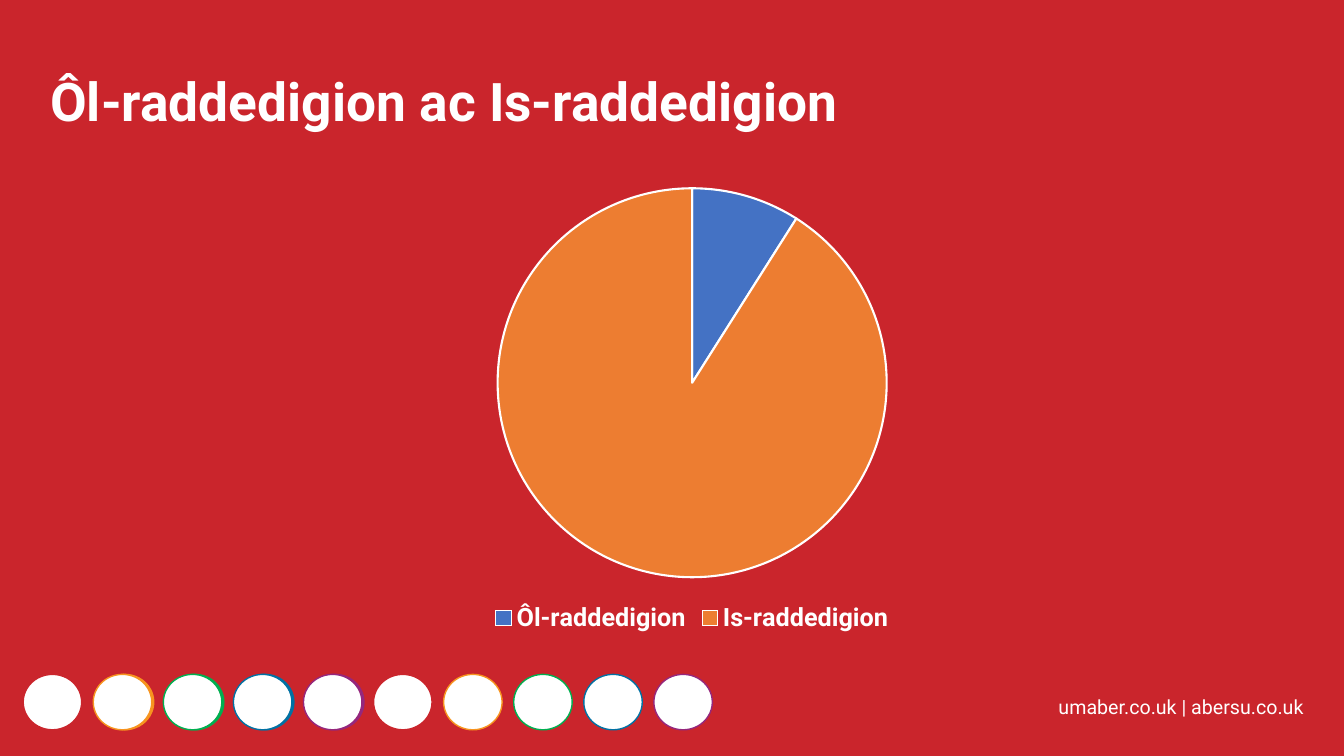
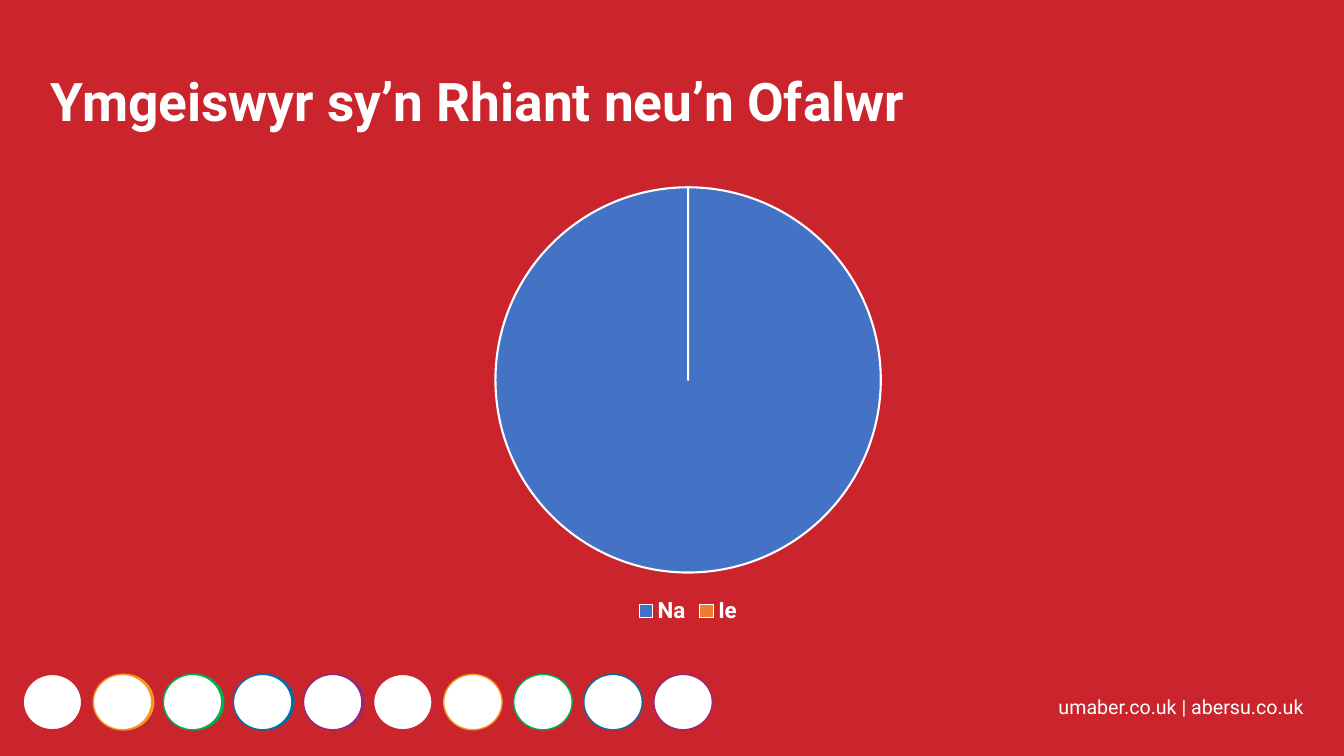
from pptx import Presentation
from pptx.chart.data import CategoryChartData
from pptx.dml.color import RGBColor
from pptx.enum.chart import XL_CHART_TYPE as ChartType, XL_LEGEND_POSITION as LegendPosition
from pptx.enum.shapes import MSO_SHAPE as Preset
from pptx.util import Inches, Pt

RED, WHITE = "CA252C", "FFFFFF"
RING_COLOURS = [RED, "F7941F", "00AF50", "0171A3", "95277D"]
SLICE_COLOURS = ["4472C4", "ED7D31"]
RING_STEP = 0.695

SLIDES = [
    ("Ôl-raddedigion ac Is-raddedigion", {"Ôl-raddedigion": 9, "Is-raddedigion": 91},
     (2.74, 1.73, 8.25, 4.6), 18),
    ("Ymgeiswyr sy’n Rhiant neu’n Ofalwr", {"Na": 100, "Ie": 0},
     (0.98, 1.72, 11.69, 4.51), 16),
]


def colour(value):
    return RGBColor.from_string(value)


def style_font(font, size, bold):
    font.name = "Roboto"
    font.size = Pt(size)
    font.bold = bold
    font.color.rgb = colour(WHITE)


deck = Presentation()
deck.slide_width, deck.slide_height = Inches(13.33), Inches(7.5)
backdrop = deck.slide_master.background.fill
backdrop.solid()
backdrop.fore_color.rgb = colour(RED)

discs = [(0.25 + i * RING_STEP, ring, ring) for i, ring in enumerate(RING_COLOURS)]
discs += [(0.23 + i * RING_STEP, WHITE, ring) for i, ring in enumerate(RING_COLOURS * 2)]

for heading, shares, chart_box, legend_size in SLIDES:
    slide = deck.slides.add_slide(deck.slide_layouts[6])

    for left, inside, ring in discs:
        disc = slide.shapes.add_shape(
            Preset.OVAL, Inches(left), Inches(6.69), Inches(0.58), Inches(0.55))
        disc.shadow.inherit = False
        disc.fill.solid()
        disc.fill.fore_color.rgb = colour(inside)
        disc.line.color.rgb = colour(ring)
        disc.line.width = Pt(1)

    for text, box, size, bold, spacing in [
        ("umaber.co.uk | abersu.co.uk", (10.4, 6.84, 2.8, 0.34), 14, False, 1.0),
        (heading, (0.4, 0.7, 11.42, 0.88), 38, True, 0.9),
    ]:
        frame = slide.shapes.add_textbox(*map(Inches, box)).text_frame
        frame.word_wrap = True
        line = frame.paragraphs[0]
        line.text = text
        line.line_spacing = spacing
        style_font(line.font, size, bold)

    shares_data = CategoryChartData()
    shares_data.categories = list(shares)
    shares_data.add_series("Series 1", list(shares.values()))
    pie = slide.shapes.add_chart(ChartType.PIE, *map(Inches, chart_box), shares_data).chart
    style_font(pie.font, legend_size, True)
    pie.has_title = False
    pie.has_legend = True
    pie.legend.position = LegendPosition.BOTTOM
    pie.legend.include_in_layout = False
    style_font(pie.legend.font, legend_size, True)
    pie.plots[0].vary_by_categories = True
    for index, slice_colour in enumerate(SLICE_COLOURS):
        share = pie.plots[0].series[0].points[index].format
        share.fill.solid()
        share.fill.fore_color.rgb = colour(slice_colour)
        share.line.color.rgb = colour(WHITE)
        share.line.width = Pt(1.5)

deck.save("out.pptx")
